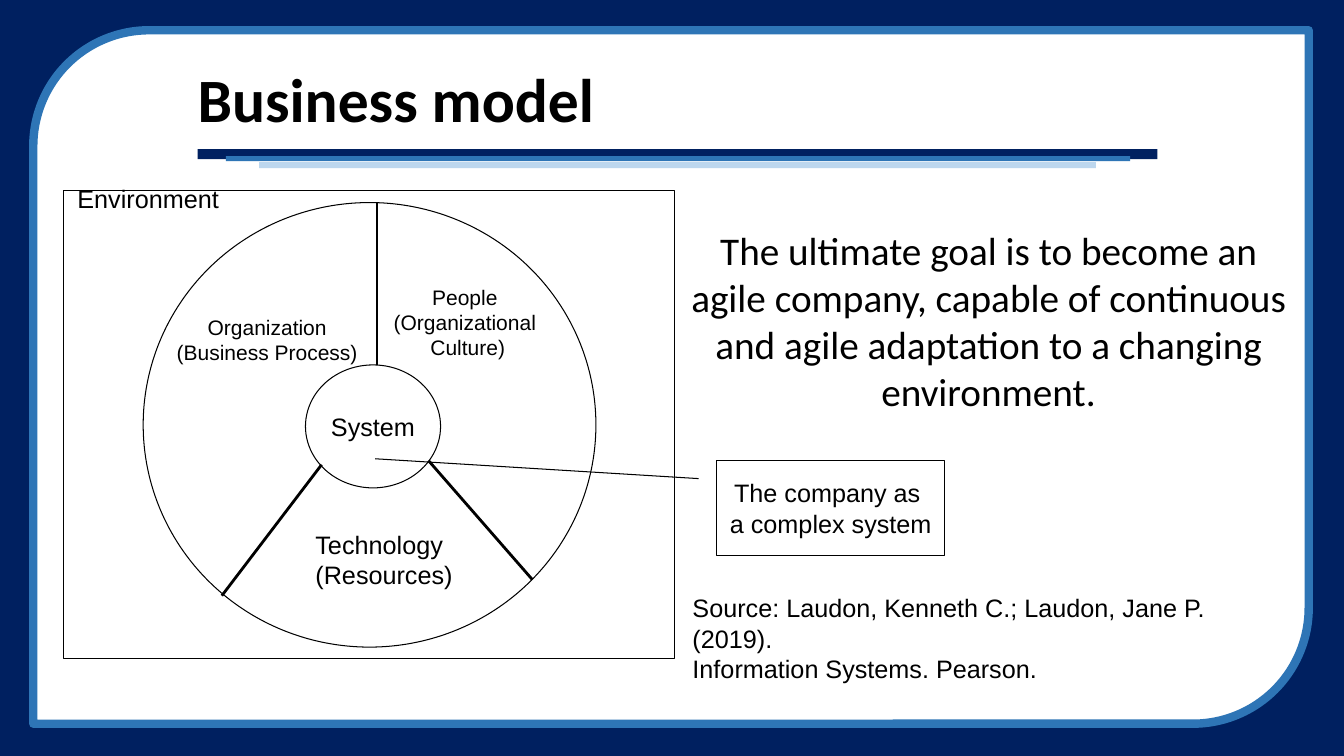
from lxml import etree
from pptx import Presentation
from pptx import util as u
from pptx.dml.color import RGBColor
from pptx.enum import shapes, text
from pptx.oxml.ns import qn

PX = 9144  # 100 px to the inch
C = {"navy": "002060", "blue": "2E75B6", "pale": "BDD7EE", "white": "FFFFFF", "black": "000000"}
G = shapes.MSO_SHAPE
LEFT, CENTER = text.PP_ALIGN.LEFT, text.PP_ALIGN.CENTER


def shape(kind, box, fill="white", line=None, width=0):
    sp = s.shapes.add_shape(kind, *[v * PX for v in box])
    sp.shadow.inherit = False
    sp.fill.solid()
    sp.fill.fore_color.rgb = RGBColor.from_string(C[fill])
    if line:
        sp.line.color.rgb = RGBColor.from_string(C[line])
        sp.line.width = u.Pt(width)
    else:
        sp.line.fill.background()
    return sp


def write(sp, words, size, align=CENTER, font="Arial", bold=False, wrap=True, anchor="TOP", inset=(10, 5)):
    tf = sp.text_frame
    tf.text = words
    tf.word_wrap = wrap
    tf.auto_size = text.MSO_AUTO_SIZE.NONE
    tf.vertical_anchor = text.MSO_ANCHOR[anchor]
    tf.margin_left = tf.margin_right = inset[0] * PX
    tf.margin_top = tf.margin_bottom = inset[1] * PX
    for p in tf.paragraphs:
        p.alignment = align
        for r in p.runs:
            r.font.name, r.font.size, r.font.bold = font, u.Pt(size), bold
            r.font.color.rgb = RGBColor.from_string(C["black"])


prs = Presentation()
prs.slide_width, prs.slide_height = 1333 * PX, 750 * PX
s = prs.slides.add_slide(prs.slide_layouts[1])

# Background, panel and title rules
s.background.fill.solid()
s.background.fill.fore_color.rgb = RGBColor.from_string(C["navy"])
panel = shape(G.ROUND_2_DIAG_RECTANGLE, (33, 30, 1265, 688), "white", "blue", 6)
panel.adjustments[0], panel.adjustments[1] = 0.167, 0
for box, color in [((196, 148, 952, 10), "navy"), ((224, 155, 897, 5), "blue"), ((257, 161, 830, 6), "pale")]:
    shape(G.RECTANGLE, box, color)

# Title and body, placed in front of the panel
title, body = s.shapes.title, s.placeholders[1]
for sp, box in [(title, (196, 49, 952, 97)), (body, (681, 224, 599, 200))]:
    s.shapes.element.append(sp.element)
    sp.left, sp.top, sp.width, sp.height = [v * PX for v in box]
write(title, "Business model", 44, LEFT, "Calibri", True, anchor="MIDDLE", inset=(0, 0))
write(body, "The ultimate goal is to become an agile company, capable of continuous "
      "and agile adaptation to a changing environment.", 28, font="Calibri", inset=(0, 0))
p = body.text_frame.paragraphs[0]
pPr = p.runs[0].font and p._p.get_or_add_pPr()
pPr.set("marL", "0")
pPr.set("indent", "0")
etree.SubElement(pPr, qn("a:buNone"))
p.space_before = u.Pt(0)

# Environment frame and circles
shape(G.RECTANGLE, (63, 189, 606, 464), "white", "black", 0.5)
shape(G.OVAL, (142, 201, 449, 441), "white", "black")
system = shape(G.OVAL, (303, 362, 134, 122), "white", "black")
write(system, "System", 18, wrap=False, anchor="MIDDLE")

# Dividers between the three sectors
for ends in [(374, 201, 374, 362), (319, 461, 220, 591), (425, 457, 528, 575)]:
    cx = s.shapes.add_connector(shapes.MSO_CONNECTOR.STRAIGHT, *[v * PX for v in ends])
    cx.line.color.rgb = RGBColor.from_string(C["black"])
    cx.line.width = u.Pt(0)
    etree.SubElement(cx.element.spPr, qn("a:effectLst"))

# Labels and source
for box, words, size, align in [
    ((67, 177, 200, 40), "Environment", 18, LEFT),
    ((165, 307, 200, 56), "Organization\n(Business Process)", 15, CENTER),
    ((380, 277, 162, 79), "People\n(Organizational\n Culture)", 15, CENTER),
    ((303, 520, 159, 62), "Technology\n(Resources)", 18, LEFT),
    ((677, 583, 613, 66), "Source: Laudon, Kenneth C.; Laudon, Jane P. (2019).\n"
     "Information Systems. Pearson.", 18, LEFT),
]:
    write(s.shapes.add_textbox(*[v * PX for v in box]), words, size, align)

# Callout pointing at the system
callout = shape(G.LINE_CALLOUT_1, (711, 457, 226, 94), "white", "black")
for i, value in enumerate([0.19, -0.08, -0.02, -1.5]):
    callout.adjustments[i] = value
write(callout, "The company as \na complex system", 18, wrap=False, anchor="MIDDLE")

prs.save("out.pptx")
